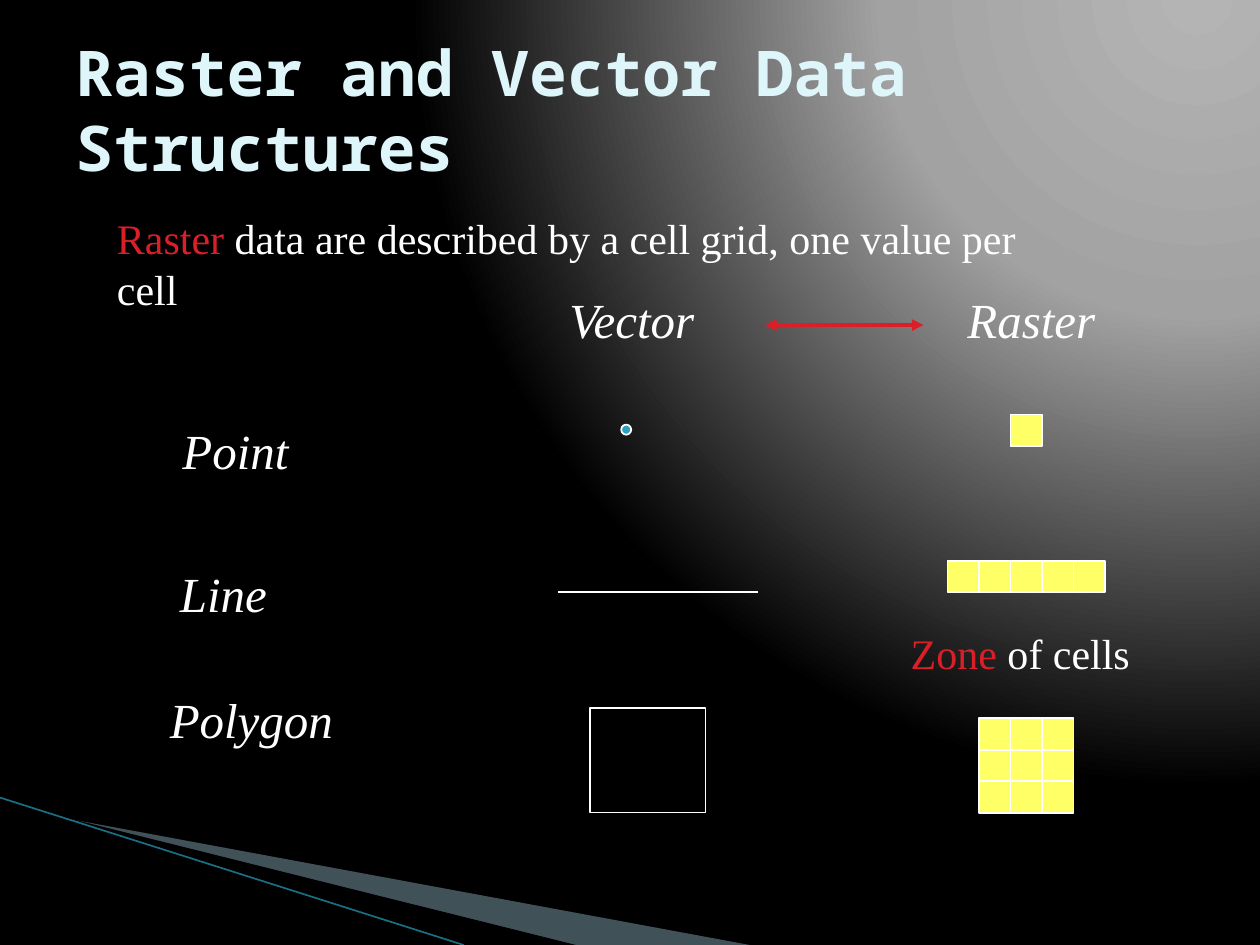
from pptx import Presentation
from pptx.dml.color import RGBColor
from pptx.enum.shapes import MSO_CONNECTOR as Link, MSO_SHAPE as Kind
from pptx.enum.text import MSO_ANCHOR as Anchor
from pptx.oxml import parse_xml
from pptx.oxml.ns import nsdecls, qn
from pptx.util import Inches, Pt
from lxml.etree import SubElement

SERIF = "Times New Roman"
MONO = "Noto Sans Mono"
WHITE, BLACK, RED = "FFFFFF", "000000", "DA1F28"
YELLOW, BLUE, TEAL, PALE, ICE = "FFFF66", "2DA2BF", "1B6F85", "A0CBDC", "DEF5FA"
CELL = 0.25


def color(code):
    return RGBColor.from_string(code)


class Board:
    def __init__(self, deck):
        self.slide = deck.slides.add_slide(deck.slide_layouts[6])
        self.shapes = self.slide.shapes

    def backdrop(self, stops, focus):
        self.slide.background.fill.gradient()
        old = next(self.slide.element.iter(qn("a:gradFill")))
        marks = "".join(
            f'<a:gs pos="{pos * 1000}"><a:srgbClr val="{code}"/></a:gs>'
            for pos, code in stops
        )
        sides = " ".join(f'{side}="{part * 1000}"' for side, part in zip("ltrb", focus))
        new = parse_xml(
            f'<a:gradFill {nsdecls("a")} rotWithShape="1"><a:gsLst>{marks}</a:gsLst>'
            f'<a:path path="circle"><a:fillToRect {sides}/></a:path></a:gradFill>'
        )
        old.getparent().replace(old, new)

    def text(self, box, runs, size=28, font=SERIF, bold=False, italic=False,
             wrap=True, anchor=Anchor.TOP):
        frame = self.shapes.add_textbox(*map(Inches, box)).text_frame
        frame.word_wrap = wrap
        frame.vertical_anchor = anchor
        for words, code in runs:
            run = frame.paragraphs[0].add_run()
            run.text = words
            run.font.name = font
            run.font.size = Pt(size)
            run.font.bold = bold
            run.font.italic = italic
            run.font.color.rgb = color(code)

    def label(self, words, left, top, width):
        self.text((left, top, width, 0.57), [(words, WHITE)], italic=True, wrap=False)

    def shape(self, kind, box, fill=None):
        item = self.shapes.add_shape(kind, *map(Inches, box))
        item.shadow.inherit = False
        if fill:
            item.fill.solid()
            item.fill.fore_color.rgb = color(fill)
        else:
            item.fill.background()
        item.line.color.rgb = color(WHITE)
        item.line.width = Pt(1)

    def grid(self, left, top, cols, rows):
        for row in range(rows):
            for col in range(cols):
                box = (left + col * CELL, top + row * CELL, CELL, CELL)
                self.shape(Kind.RECTANGLE, box, YELLOW)

    def wedge(self, points, fill, alpha=100):
        spots = [(Inches(x), Inches(y)) for x, y in points]
        path = self.shapes.build_freeform(*spots[0])
        path.add_line_segments(spots[1:], close=True)
        item = path.convert_to_shape()
        item.shadow.inherit = False
        item.fill.solid()
        item.fill.fore_color.rgb = color(fill)
        item.line.fill.background()
        if alpha < 100:
            tint = next(item.element.spPr.iter(qn("a:srgbClr")))
            SubElement(tint, qn("a:alpha"), val=str(alpha * 1000))

    def line(self, start, end, code, width, arrows=False):
        item = self.shapes.add_connector(Link.STRAIGHT, *map(Inches, (*start, *end)))
        item.line.color.rgb = color(code)
        item.line.width = Pt(width)
        if arrows:
            for tag in ("a:headEnd", "a:tailEnd"):
                SubElement(item.line._get_or_add_ln(), qn(tag), type="triangle")
        SubElement(item.element.spPr, qn("a:effectLst"))


def main():
    deck = Presentation()
    deck.slide_width, deck.slide_height = Inches(10), Inches(7.5)
    board = Board(deck)
    board.backdrop([(0, "B4B4B4"), (40, "A2A2A2"), (100, BLACK)], (95, -106, 5, 206))

    board.wedge([(0.55, 6.5), (5.95, 7.5), (4.56, 7.5)], PALE, 40)
    board.wedge([(0.53, 6.49), (4.57, 7.5), (3.72, 7.5)], BLACK)
    board.line((0, 6.33), (3.68, 7.5), TEAL, 0.95)

    board.text((0.5, 0.35, 9.08, 1.03), [("Raster and Vector Data Structures", ICE)],
               size=36, font=MONO, bold=True, anchor=Anchor.MIDDLE)
    board.text((0.83, 1.64, 7.6, 0.5),
               [("Raster", RED), (" data are described by a cell grid, one value per cell", WHITE)],
               size=24)

    for words, left, top, width in (
        ("Vector", 4.42, 2.25, 1.24),
        ("Raster", 7.58, 2.25, 1.22),
        ("Point", 1.35, 3.29, 1.04),
        ("Line", 1.33, 4.42, 0.89),
        ("Polygon", 1.25, 5.42, 1.5),
    ):
        board.label(words, left, top, width)
    board.line((6.07, 2.58), (7.33, 2.58), RED, 2.25, arrows=True)

    board.shape(Kind.OVAL, (4.93, 3.37, 0.08, 0.08), BLUE)
    board.line((4.43, 4.7), (6.02, 4.7), WHITE, 1)
    board.shape(Kind.RECTANGLE, (4.68, 5.62, 0.92, 0.83))

    board.grid(8.02, 3.29, 1, 1)
    board.grid(7.52, 4.45, 5, 1)
    board.grid(7.77, 5.7, 3, 3)
    board.text((7.13, 4.93, 1.94, 0.5), [("Zone", RED), (" of cells", WHITE)],
               size=24, wrap=False)

    deck.save("out.pptx")


if __name__ == "__main__":
    main()
